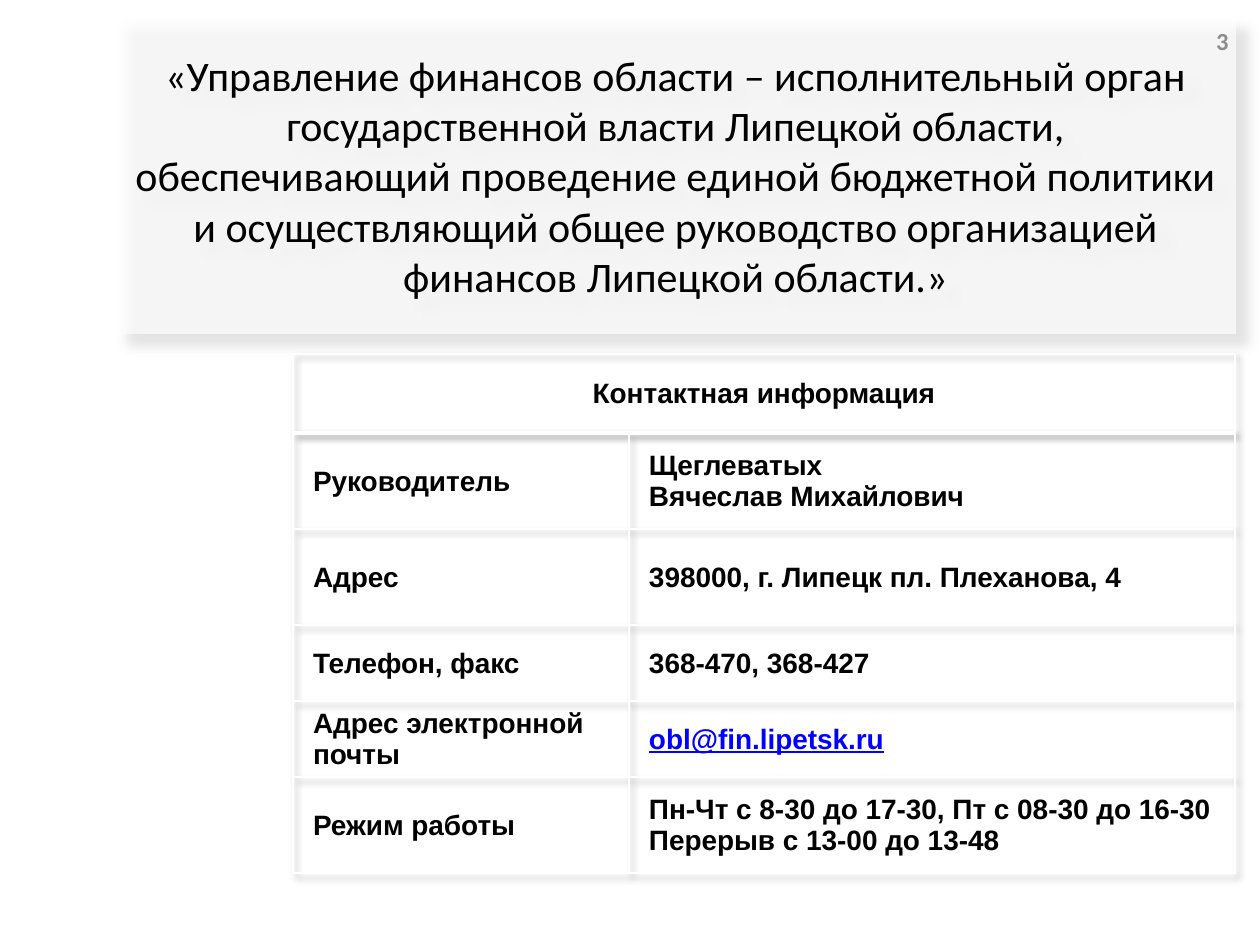
from lxml import etree
from pptx import Presentation, util as u
from pptx.dml.color import RGBColor
from pptx.enum import text
from pptx.oxml.ns import qn

PX = 914400 / 126
BLACK, WHITE, GREY, LINK = "000000", "FFFFFF", "8C8C8C", "0000FF"

MISSION = ("«Управление финансов области – исполнительный орган государственной "
           "власти Липецкой области, обеспечивающий проведение единой бюджетной "
           "политики и осуществляющий общее руководство организацией финансов "
           "Липецкой области.»")
CONTACTS_HEADING = "Контактная информация"
EMAIL = "obl@fin.lipetsk.ru"
CONTACTS = [
    ("Руководитель", "Щеглеватых\nВячеслав Михайлович"),
    ("Адрес", "398000, г. Липецк пл. Плеханова, 4"),
    ("Телефон, факс", "368-470, 368-427"),
    ("Адрес электронной почты", EMAIL),
    ("Режим работы", "Пн-Чт с 8-30 до 17-30, Пт с 08-30 до 16-30\nПерерыв с 13-00 до 13-48"),
]
LABEL_SHARE = 0.357
ROW_HEIGHTS = [79, 96, 96, 76, 76, 96]


def px(length):
    return u.Emu(round(length * PX))


def rgb(value):
    return RGBColor.from_string(value)


def place(shape, box):
    shape.left, shape.top, shape.width, shape.height = map(px, box)


def style_text(frame, size, font, color, align, bold=False, underline=False):
    for paragraph in frame.paragraphs:
        paragraph.alignment = align
        face = paragraph.font
        face.size, face.name = u.Pt(size), font
        face.bold, face.underline = bold, underline
        face.color.rgb = rgb(color)


def add_color(parent, color, alpha=100):
    clr = etree.SubElement(parent, qn("a:srgbClr"), val=color)
    if alpha < 100:
        etree.SubElement(clr, qn("a:alpha"), val=str(alpha * 1000))


def shadow_effect(blur, distance, alpha):
    """Black shadow falling to the lower right; lengths in points."""
    effects = etree.Element(qn("a:effectLst"))
    shadow = etree.SubElement(effects, qn("a:outerShdw"), blurRad=str(u.Pt(blur)),
                              dist=str(u.Pt(distance)), dir="2700000",
                              algn="tl", rotWithShape="0")
    add_color(shadow, BLACK, alpha)
    return effects


def add_mission(slide, box):
    title = slide.shapes.title
    place(title, box)
    title.fill.solid()
    title.fill.fore_color.rgb = rgb(WHITE)
    fill = title.fill.fore_color._xFill
    fill.clear()
    add_color(fill, WHITE, 65)
    title._element.spPr.append(shadow_effect(7, 10, 16))
    frame = title.text_frame
    frame.text = MISSION
    frame.word_wrap = True
    frame.auto_size = text.MSO_AUTO_SIZE.NONE
    frame.vertical_anchor = text.MSO_ANCHOR.MIDDLE
    style_text(frame, 24, "Calibri", BLACK, text.PP_ALIGN.CENTER)


def set_borders(cell, bottom):
    properties = cell._tc.get_or_add_tcPr()
    for side, width in (("L", 1), ("R", 1), ("T", 1), ("B", bottom)):
        line = etree.SubElement(properties, qn(f"a:ln{side}"), w=str(u.Pt(width)))
        add_color(etree.SubElement(line, qn("a:solidFill")), WHITE)


def fill_cell(cell, content, heading=False):
    cell.text = content
    cell.vertical_anchor = text.MSO_ANCHOR.MIDDLE
    cell.margin_left = px(1 if heading else 20)
    cell.margin_top = cell.margin_right = px(1)
    cell.margin_bottom = 0
    is_link = content == EMAIL
    style_text(cell.text_frame, 16, "Arial", LINK if is_link else BLACK,
               text.PP_ALIGN.CENTER if heading else text.PP_ALIGN.LEFT,
               bold=True, underline=is_link)


def add_contacts(slide, left, top, width):
    frame = slide.shapes.add_table(len(ROW_HEIGHTS), 2, px(left), px(top),
                                   px(width), px(sum(ROW_HEIGHTS)))
    table = frame.table
    table.first_row = table.horz_banding = False
    table._tbl.tblPr.insert(0, shadow_effect(4, 3, 35))
    label_width = round(width * LABEL_SHARE)
    table.columns[0].width = px(label_width)
    table.columns[1].width = px(width - label_width)

    for index, (row, height) in enumerate(zip(table.rows, ROW_HEIGHTS)):
        row.height = px(height)
        for cell in row.cells:
            set_borders(cell, bottom=3 if index == 0 else 1)
            cell.fill.background()

    heading = table.cell(0, 0)
    heading.merge(table.cell(0, 1))
    fill_cell(heading, CONTACTS_HEADING, heading=True)
    for index, contact in enumerate(CONTACTS, start=1):
        for column, content in enumerate(contact):
            fill_cell(table.cell(index, column), content)


def add_page_number(slide, box, number):
    frame = slide.shapes.add_textbox(*map(px, box)).text_frame
    frame.word_wrap = True
    frame.vertical_anchor = text.MSO_ANCHOR.MIDDLE
    frame.text = str(number)
    style_text(frame, 14, "Calibri", GREY, text.PP_ALIGN.RIGHT, bold=True)


def main():
    deck = Presentation()
    deck.slide_width, deck.slide_height = px(1260), px(945)
    slide = deck.slides.add_slide(deck.slide_layouts[5])
    add_mission(slide, (115, 16, 1121, 318))
    add_contacts(slide, left=293, top=354, width=942)
    add_page_number(slide, (1155, 16, 86, 50), 3)
    deck.save("out.pptx")


if __name__ == "__main__":
    main()
